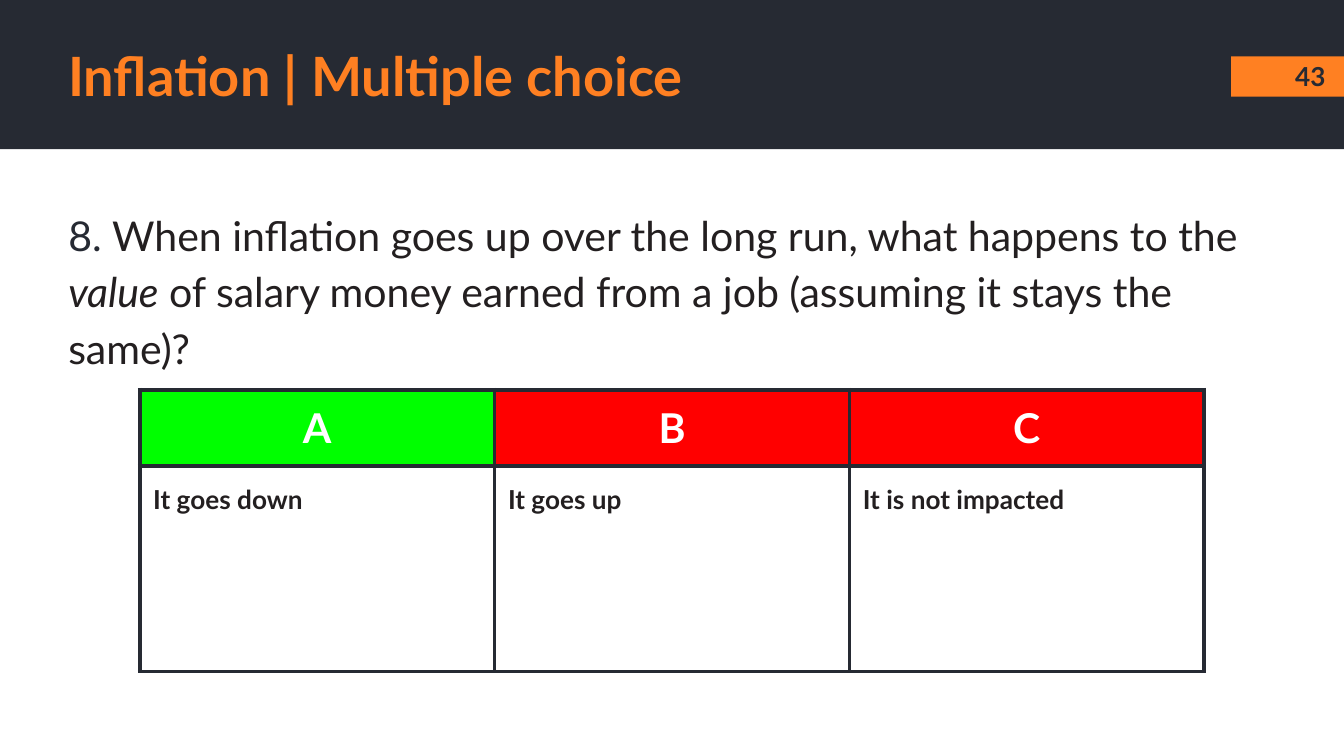
from lxml.etree import SubElement
from pptx import Presentation
from pptx.dml.color import RGBColor
from pptx.enum.shapes import MSO_SHAPE
from pptx.enum.text import MSO_ANCHOR, PP_ALIGN
from pptx.oxml.ns import qn
from pptx.util import Inches, Pt

HUES = {
    "dark": "262A33",
    "orange": "FF8022",
    "ink": "231F20",
    "white": "FFFFFF",
    "green": "00FF00",
    "red": "FF0000",
}
PAD = {f"margin_{side}": Inches(0.1) for side in ("left", "top", "right", "bottom")}
CHOICES = [
    ("A", "green", "It goes down"),
    ("B", "red", "It goes up"),
    ("C", "red", "It is not impacted"),
]


def color(name):
    return RGBColor.from_string(HUES[name])


def apply(target, values):
    for key, value in values.items():
        setattr(target, key, value)


def add_run(para, text, hue, size, **style):
    run = para.add_run()
    run.text = text
    apply(run.font, {"name": "Lato", "size": Pt(size), **style})
    run.font.color.rgb = color(hue)


def add_bar(slide, box, hue):
    bar = slide.shapes.add_shape(MSO_SHAPE.RECTANGLE, *map(Inches, box))
    bar.shadow.inherit = False
    bar.fill.solid()
    bar.fill.fore_color.rgb = color(hue)
    bar.line.fill.background()


def add_text(slide, box, runs, size, anchor=MSO_ANCHOR.MIDDLE, **layout):
    frame = slide.shapes.add_textbox(*map(Inches, box)).text_frame
    apply(frame, {"word_wrap": True, "vertical_anchor": anchor, **PAD})
    para = frame.paragraphs[0]
    apply(para, layout)
    for text, hue, style in runs:
        add_run(para, text, hue, size, **style)


def add_edges(cell):
    props = cell._tc.get_or_add_tcPr()
    for spot, side in enumerate("LRTB"):
        line = SubElement(props, qn(f"a:ln{side}"), w=str(Pt(2.25)))
        fill = SubElement(line, qn("a:solidFill"))
        SubElement(fill, qn("a:srgbClr"), val=HUES["dark"])
        props.remove(line)
        props.insert(spot, line)


def fill_cell(cell, text, hue, size, back=None, **layout):
    apply(cell, PAD)
    if back:
        cell.fill.solid()
        cell.fill.fore_color.rgb = color(back)
    else:
        cell.fill.background()
    add_edges(cell)
    para = cell.text_frame.paragraphs[0]
    apply(para, layout)
    add_run(para, text, hue, size, bold=True)


def add_choices(slide):
    width, heights = 2.64, (0.56, 1.53)
    box = (1.04, 2.9, width * len(CHOICES), sum(heights))
    table = slide.shapes.add_table(2, len(CHOICES), *map(Inches, box)).table
    apply(table, {"first_row": False, "horz_banding": False})
    for row, height in zip(table.rows, heights):
        row.height = Inches(height)
    for col, (letter, hue, answer) in enumerate(CHOICES):
        table.columns[col].width = Inches(width)
        fill_cell(table.cell(0, col), letter, "white", 22, hue, alignment=PP_ALIGN.CENTER)
        fill_cell(table.cell(1, col), answer, "ink", 14, line_spacing=1.15)


def main():
    deck = Presentation()
    wide = Inches(10)
    apply(deck, {"slide_width": wide, "slide_height": wide * 9 // 16})
    slide = deck.slides.add_slide(deck.slide_layouts[6])
    add_bar(slide, (0, 0, 10, 1.11), "dark")
    add_bar(slide, (9.16, 0.42, 0.84, 0.3), "orange")
    question = [
        ("8. ", "dark", {}),
        ("When inflation goes up over the long run, what happens to the ", "ink", {}),
        ("value", "ink", {"italic": True}),
        (" of salary money earned from a job (assuming it stays the same)?", "ink", {}),
    ]
    add_text(slide, (0.41, 1.41, 9.07, 2.76), question, 22, MSO_ANCHOR.TOP, line_spacing=1.15)
    title = [("Inflation | Multiple choice", "orange", {"bold": True})]
    add_text(slide, (0.41, 0.28, 8.74, 0.56), title, 29)
    number = [("43", "dark", {"bold": True})]
    add_text(slide, (9.49, 0.44, 0.52, 0.25), number, 14, alignment=PP_ALIGN.CENTER)
    add_choices(slide)
    deck.save("out.pptx")


if __name__ == "__main__":
    main()
